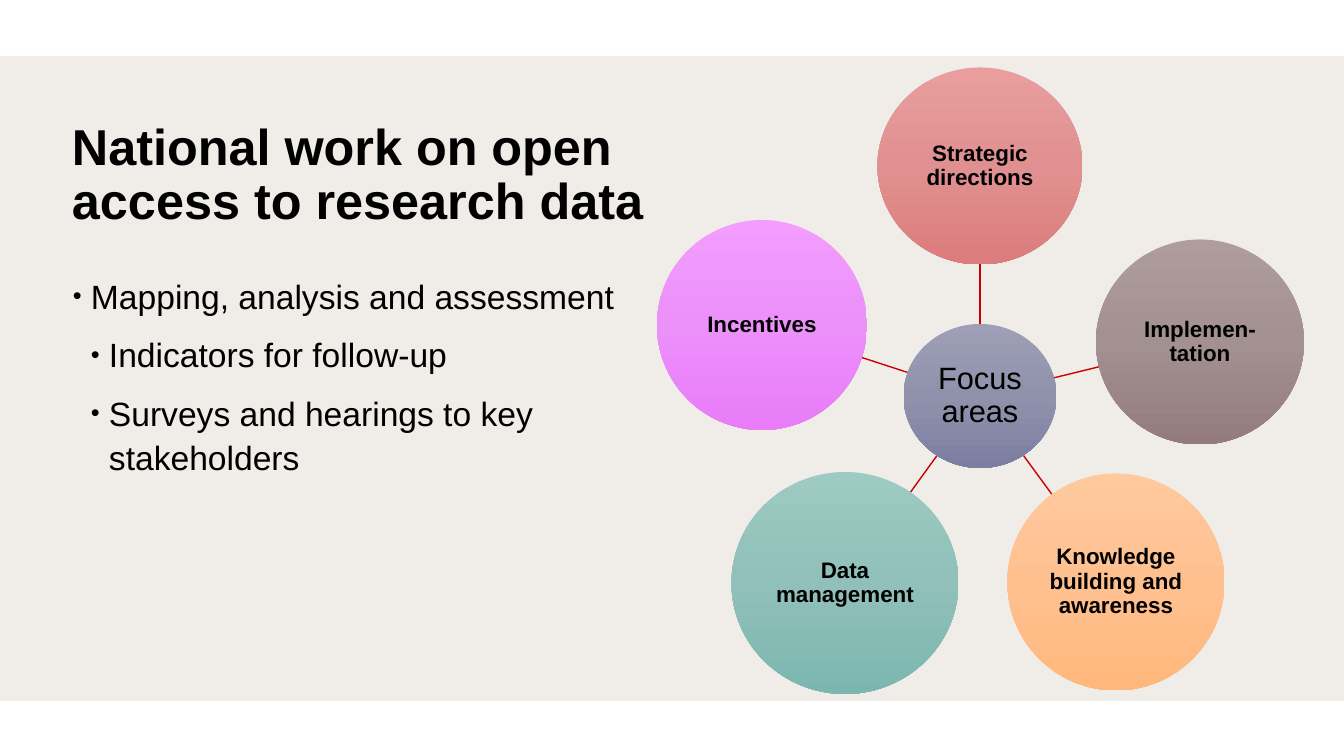
from copy import deepcopy
from math import hypot

from lxml.etree import SubElement
from pptx import Presentation
from pptx.dml.color import RGBColor
from pptx.enum.shapes import MSO_CONNECTOR, MSO_SHAPE
from pptx.enum.text import MSO_ANCHOR, PP_ALIGN
from pptx.oxml.ns import qn
from pptx.util import Pt

PX = 914400 / 100.8
BLACK = RGBColor(0, 0, 0)
PANEL = RGBColor(0xF0, 0xED, 0xE8)
SPOKE = RGBColor(0xC9, 0x00, 0x00)
BLUE_GREY = [RGBColor.from_string(c) for c in ("9E9FB7", "9092AC", "7C7EA1")]
RED = [RGBColor.from_string(c) for c in ("E99D9D", "E09090", "DC7C7C")]
BROWN = [RGBColor.from_string(c) for c in ("AF9D9D", "A39090", "947C7C")]
ORANGE = [RGBColor.from_string(c) for c in ("FFC99E", "FFC090", "FFB87C")]
TEAL = [RGBColor.from_string(c) for c in ("9DCAC3", "90C0B9", "7CB7AF")]
PINK = [RGBColor.from_string(c) for c in ("F29DFF", "EC90FA", "E97CF9")]


def emu(*lengths):
    return [round(length * PX) for length in lengths]


def write(frame, lines, size, spacing, bold=False, inset=0):
    """Fill a text frame with one paragraph per line and return the paragraphs."""
    frame.word_wrap = True
    frame.margin_left = frame.margin_right = round(inset * PX)
    frame.margin_top = frame.margin_bottom = round(inset * PX)
    frame.text = "\n".join(lines)
    for paragraph in frame.paragraphs:
        paragraph.line_spacing = spacing
        for run in paragraph.runs:
            run.font.name = "Arial"
            run.font.size = Pt(size)
            run.font.bold = bold
            run.font.color.rgb = BLACK
    return frame.paragraphs


prs = Presentation()
prs.slide_width, prs.slide_height = emu(1344, 756)
slide = prs.slides.add_slide(prs.slide_layouts[6])
shapes = slide.shapes

panel = shapes.add_shape(MSO_SHAPE.RECTANGLE, *emu(0, 56, 1344, 645))
panel.shadow.inherit = False
panel.fill.solid()
panel.fill.fore_color.rgb = PANEL
panel.line.fill.background()

title = shapes.add_textbox(*emu(72, 122, 596, 139))
write(title.text_frame, ["National work on open access to research data"], 36, 0.9, bold=True)

tasks = shapes.add_textbox(*emu(73, 272, 597, 372))
task_lines = ["Mapping, analysis and assessment", "Indicators for follow-up",
              "Surveys and hearings to key stakeholders"]
for i, task in enumerate(write(tasks.text_frame, task_lines, 24, 1.1)):
    level = min(i, 1)
    task.level = level
    if level:
        task.space_before = Pt(10)
    props = task._p.get_or_add_pPr()
    indent, = emu(18)
    props.set("marL", str(indent * (level + 1)))
    props.set("indent", str(-indent))
    SubElement(props, qn("a:buSzPct")).set("val", "75000")
    SubElement(props, qn("a:buFont")).set("typeface", "Arial")
    SubElement(props, qn("a:buChar")).set("char", "•")

# Each circle: label, centre x, centre y, width, height, gradient
hub = ("Focus areas", 980, 396, 153, 144, BLUE_GREY)
focus_areas = [
    ("Strategic directions", 980, 166, 205, 197, RED),
    ("Implemen-tation", 1200, 342, 208, 205, BROWN),
    ("Knowledge building and awareness", 1116, 582, 217, 217, ORANGE),
    ("Data management", 845, 583, 227, 222, TEAL),
    ("Incentives", 762, 325, 210, 210, PINK),
]

_, hub_x, hub_y, hub_w, hub_h, _ = hub
for _, x, y, w, h, _ in focus_areas:
    dx, dy = x - hub_x, y - hub_y
    start = 1 / hypot(2 * dx / hub_w, 2 * dy / hub_h)
    end = 1 - 1 / hypot(2 * dx / w, 2 * dy / h)
    spoke = shapes.add_connector(MSO_CONNECTOR.STRAIGHT, *emu(
        hub_x + start * dx, hub_y + start * dy, hub_x + end * dx, hub_y + end * dy))
    spoke.line.color.rgb = SPOKE
    spoke.line.width = Pt(1)
    SubElement(spoke._element.spPr, qn("a:effectLst"))

for circle in [hub] + focus_areas:
    label, x, y, w, h, gradient = circle
    disc = shapes.add_shape(MSO_SHAPE.OVAL, *emu(x - w / 2, y - h / 2, w, h))
    disc.shadow.inherit = False
    disc.line.fill.background()
    disc.fill.gradient()
    disc.fill.gradient_angle = 270
    first_stop = disc._element.spPr.find(".//" + qn("a:gs"))
    first_stop.addnext(deepcopy(first_stop))
    for stop, position, colour in zip(disc.fill.gradient_stops, (0, 0.5, 1), gradient):
        stop.position = position
        stop.color.rgb = colour
    is_hub = circle is hub
    disc.text_frame.vertical_anchor = MSO_ANCHOR.MIDDLE
    text, = write(disc.text_frame, [label], 22 if is_hub else 16, 0.9,
                  bold=not is_hub, inset=2 if is_hub else 1)
    text.alignment = PP_ALIGN.CENTER

prs.save("out.pptx")
